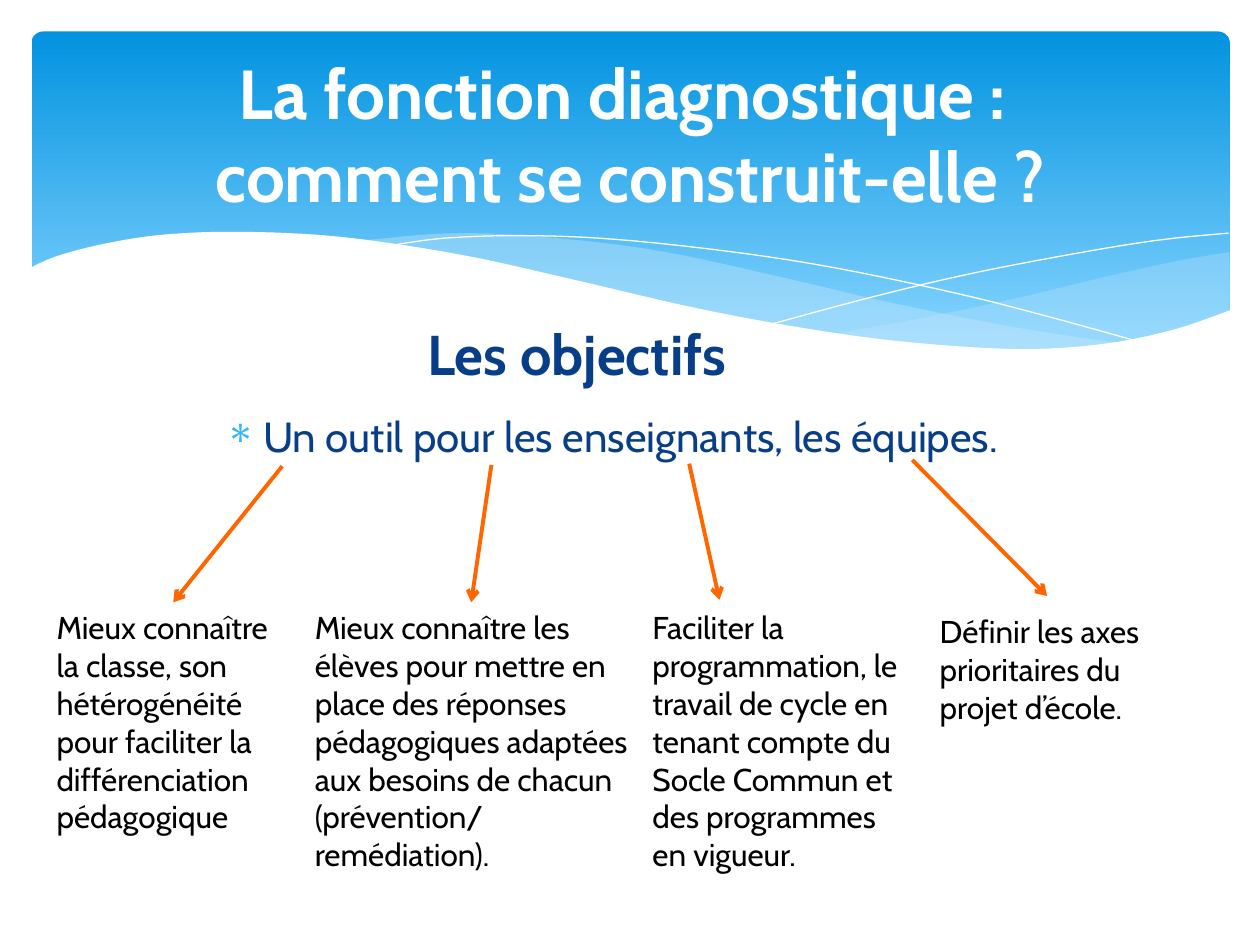
from lxml.etree import SubElement
from pptx import Presentation
from pptx.dml.color import RGBColor
from pptx.enum.shapes import MSO_CONNECTOR, MSO_SHAPE
from pptx.enum.text import MSO_ANCHOR, MSO_AUTO_SIZE, PP_ALIGN
from pptx.oxml.ns import qn
from pptx.util import Inches, Pt

COLORS = {
    "sky": "0293E0", "pale_sky": "83D3FE", "mist": "C6E7FC", "white": "FFFFFF",
    "navy": "073E87", "bullet": "31B6FD", "orange": "FF6600", "black": "000000",
}
FONT = "Cabin"

# Wave edges, left to right, in inches
WHITE_EDGE = [(0.23, 2.13), (0.46, 2.03), (0.85, 1.93), (1.32, 1.86), (1.93, 1.84),
              (2.71, 1.88), (3.65, 2.02), (4.47, 2.2), (5.55, 2.45), (6.48, 2.62),
              (7.26, 2.72), (8.09, 2.77), (8.75, 2.73), (9.3, 2.62), (9.77, 2.46)]
RIGHT_TOP = [(6.61, 2.65), (7.29, 2.53), (8.05, 2.37), (8.76, 2.2), (9.35, 2.07), (9.76, 2)]
RIGHT_BOTTOM = [(6.61, 2.65), (7.32, 2.74), (8.03, 2.78), (8.72, 2.74), (9.28, 2.63), (9.76, 2.47)]
MIDDLE_TOP = [(2.86, 1.91), (3.61, 1.85), (4.42, 1.89), (5.28, 2), (6.29, 2.22),
              (7.06, 2.4), (8.07, 2.6), (8.93, 2.73)]
MIDDLE_BOTTOM = [(2.86, 1.91), (3.62, 2.03), (4.49, 2.22), (5.3, 2.4), (6.18, 2.58),
                 (6.95, 2.7), (7.73, 2.77), (8.38, 2.78), (8.93, 2.73)]
FALLING_LINE = [(3.09, 1.95), (3.53, 1.89), (4.16, 1.87), (4.89, 1.9), (5.82, 2),
                (6.65, 2.13), (7.6, 2.33), (8.31, 2.51), (9.07, 2.72)]
RISING_LINE = [(6.13, 2.57), (6.95, 2.35), (7.76, 2.16), (8.66, 1.99), (9.24, 1.9), (9.75, 1.85)]

# Column width, top, height, arrow start, free arrow end (None: top centre), text
COLUMNS = [
    (2.05, 4.78, 1.92, (2.24, 3.7), None,
     "Mieux connaître la classe, son hétérogénéité pour faciliter la différenciation pédagogique"),
    (2.68, 4.78, 2.22, (3.9, 3.69), None,
     "Mieux connaître les élèves pour mettre en place des réponses pédagogiques "
     "adaptées aux besoins de chacun (prévention/ remédiation)."),
    (2.28, 4.78, 2.22, (5.47, 3.68), (5.71, 4.76),
     "Faciliter la programmation, le travail de cycle en tenant compte du Socle Commun "
     "et des programmes en vigueur."),
    (2.14, 4.81, 1.01, (7.24, 3.65), (8.31, 4.73),
     "Définir les axes prioritaires du projet d’école."),
]


def color(name):
    return RGBColor.from_string(COLORS[name])


def smooth(points, steps=6):
    """Catmull-Rom curve through the points."""
    padded = [points[0], *points, points[-1]]
    curve = [points[0]]
    for a, b, c, d in zip(padded, padded[1:], padded[2:], padded[3:]):
        for step in range(1, steps + 1):
            t = step / steps
            curve.append(tuple(
                0.5 * (2 * q + (r - p) * t + (2 * p - 5 * q + 4 * r - s) * t ** 2
                       + (3 * q - p - 3 * r + s) * t ** 3)
                for p, q, r, s in zip(a, b, c, d)))
    return curve


def add_outline(page, points, closed):
    (start_x, start_y), *rest = [(Inches(x), Inches(y)) for x, y in points]
    builder = page.shapes.build_freeform(start_x, start_y)
    builder.add_line_segments(rest, close=closed)
    shape = builder.convert_to_shape()
    shape.shadow.inherit = False
    return shape


def add_area(page, points, fill, opacity=100):
    area = add_outline(page, points, True)
    area.fill.solid()
    area.fill.fore_color.rgb = color(fill)
    area.line.fill.background()
    if opacity < 100:
        tint = area.element.spPr.find(qn("a:solidFill"))[0]
        SubElement(tint, qn("a:alpha"), val=str(opacity * 1000))


def add_banner(page, left, top, width, height):
    panel = page.shapes.add_shape(MSO_SHAPE.ROUNDED_RECTANGLE, Inches(left), Inches(top),
                                  Inches(width), Inches(height))
    panel.adjustments[0] = 0.034
    panel.shadow.inherit = False
    panel.line.fill.background()
    panel.fill.gradient()
    panel.fill.gradient_angle = 270
    for stop, name, position in zip(panel.fill.gradient_stops, ("sky", "pale_sky"), (0, 0.9)):
        stop.color.rgb = color(name)
        stop.position = position

    # Translucent waves, thin lines, then the white lower edge
    add_area(page, smooth(RIGHT_TOP) + smooth(RIGHT_BOTTOM)[::-1], "mist", 29)
    add_area(page, smooth(MIDDLE_TOP) + smooth(MIDDLE_BOTTOM)[::-1], "mist", 40)
    for points in (FALLING_LINE, RISING_LINE):
        curve = add_outline(page, smooth(points), False)
        curve.fill.background()
        curve.line.color.rgb = color("white")
        curve.line.width = Pt(0)
    add_area(page, smooth(WHITE_EDGE) + [(9.77, 3.29), (0.23, 3.29)], "white")


def format_font(para, size, name, bold=False):
    para.font.name = FONT
    para.font.size = Pt(size)
    para.font.bold = bold
    para.font.color.rgb = color(name)


def add_title(page, left, top, width, height):
    title = page.shapes.title
    title.left, title.top = Inches(left), Inches(top)
    title.width, title.height = Inches(width), Inches(height)
    frame = title.text_frame
    frame.text = "La fonction diagnostique : \vcomment se construit-elle ?"
    frame.vertical_anchor = MSO_ANCHOR.MIDDLE
    frame.auto_size = MSO_AUTO_SIZE.NONE
    para = frame.paragraphs[0]
    para.alignment = PP_ALIGN.CENTER
    format_font(para, 39.6, "white", True)
    # Bring the title in front of the banner
    title.element.getparent().append(title.element)


def add_text(page, left, top, width, height, text, size, name, bold=False):
    box = page.shapes.add_textbox(Inches(left), Inches(top), Inches(width), Inches(height))
    box.text_frame.word_wrap = True
    box.text_frame.text = text
    format_font(box.text_frame.paragraphs[0], size, name, bold)
    return box


def add_heading(page, left, top, width, height):
    box = add_text(page, left, top, width, height, "Les objectifs", 32, "navy", True)
    para = box.text_frame.paragraphs[0]
    para.alignment = PP_ALIGN.CENTER
    para.space_before = Pt(6.4)


def add_bullet_line(page, left, top, width, height):
    box = add_text(page, left, top, width, height,
                   "Un outil pour les enseignants, les équipes.", 24, "navy")
    para = box.text_frame.paragraphs[0]
    para.space_before = Pt(4.8)
    properties = para._p.get_or_add_pPr()
    properties.set("marL", str(Inches(0.3)))
    properties.set("indent", str(-Inches(0.3)))
    bullet_color = SubElement(properties, qn("a:buClr"))
    SubElement(bullet_color, qn("a:srgbClr"), val=COLORS["bullet"])
    SubElement(properties, qn("a:buChar"), char="∗")
    # Font defaults come after the bullet in the schema
    properties.append(properties.find(qn("a:defRPr")))


def add_arrow(page, start, end, target=None):
    arrow = page.shapes.add_connector(MSO_CONNECTOR.STRAIGHT,
                                      *(Inches(value) for value in (*start, *end)))
    if target is not None:
        arrow.end_connect(target, 0)
    arrow.line.color.rgb = color("orange")
    arrow.line.width = Pt(2.25)
    SubElement(arrow.line._get_or_add_ln(), qn("a:tailEnd"), type="arrow")
    SubElement(arrow.element.spPr, qn("a:effectLst"))


def add_columns(page, left):
    for width, top, height, start, free_end, text in COLUMNS:
        box = add_text(page, left, top, width, height, text, 18, "black")
        box.text_frame.auto_size = MSO_AUTO_SIZE.SHAPE_TO_FIT_TEXT
        if free_end:
            add_arrow(page, start, free_end)
        else:
            add_arrow(page, start, (left + width / 2, top), box)
        left += width


def main():
    deck = Presentation()
    deck.slide_width, deck.slide_height = Inches(10), Inches(7.5)
    page = deck.slides.add_slide(deck.slide_layouts[5])
    add_banner(page, 0.25, 0.25, 9.51, 2.7)
    add_title(page, 0.5, 0.37, 9, 1.37)
    add_heading(page, 0.53, 2.49, 8.1, 0.75)
    add_bullet_line(page, 1.69, 3.21, 6.61, 0.71)
    add_columns(page, 0.35)
    deck.save("out.pptx")


if __name__ == "__main__":
    main()
